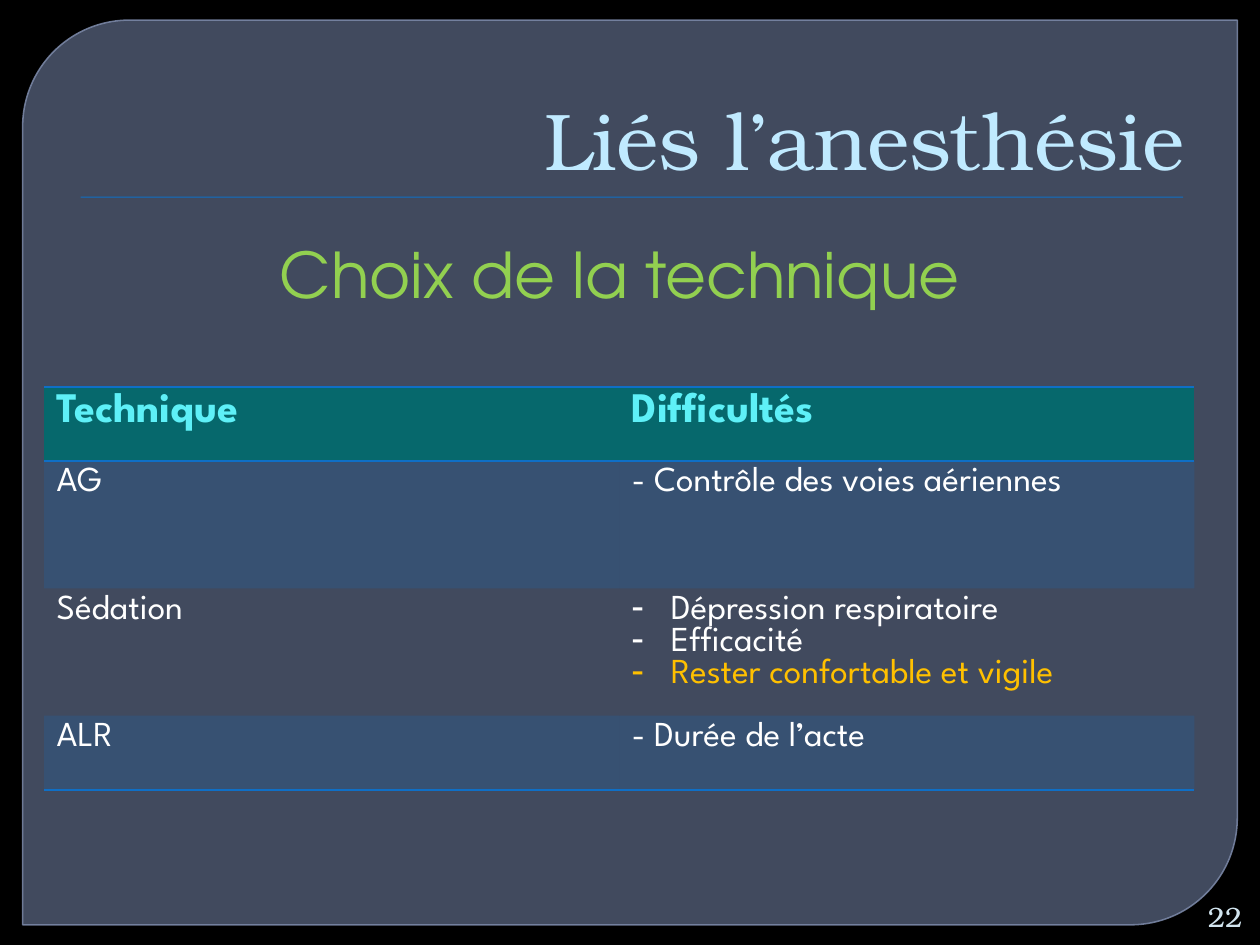
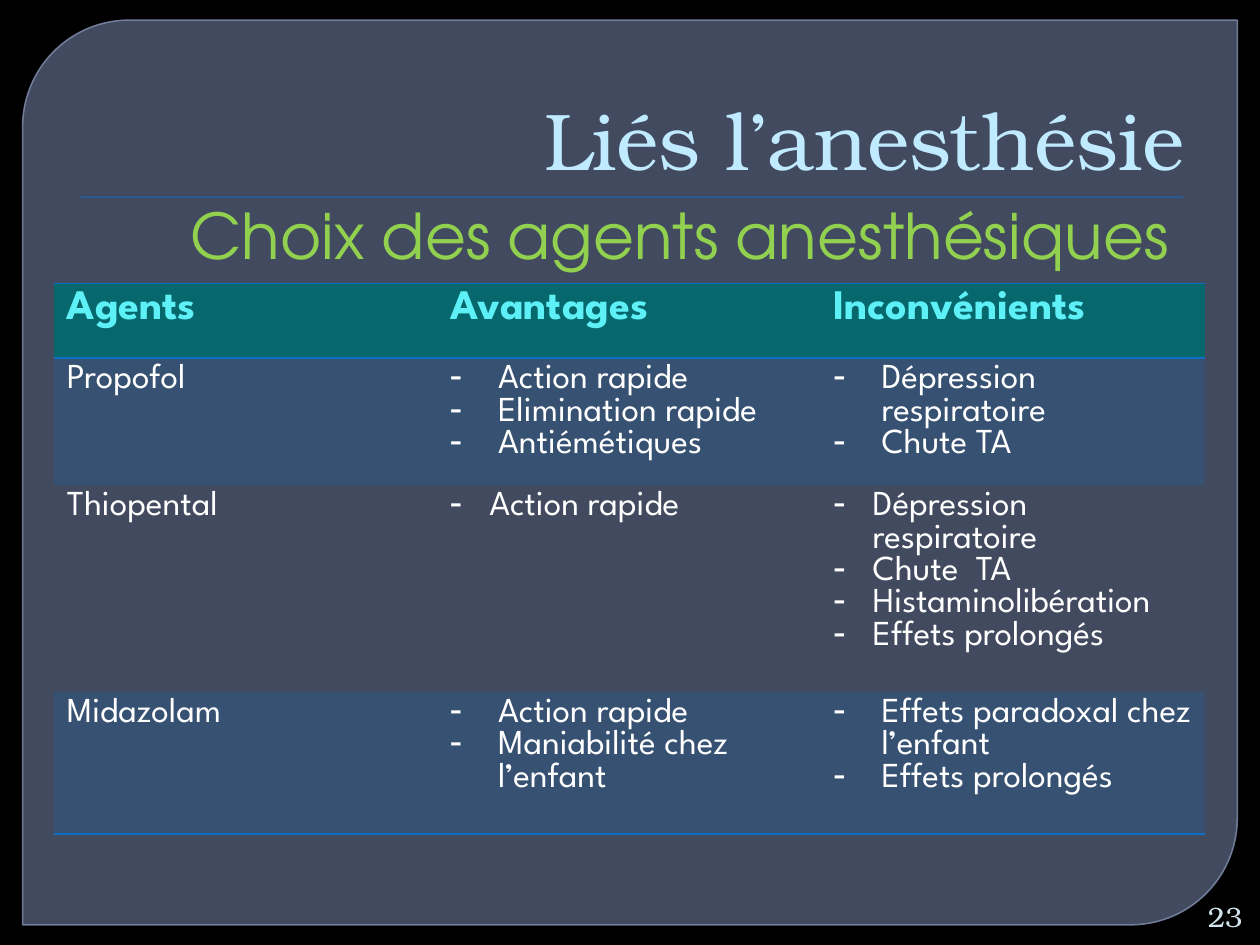
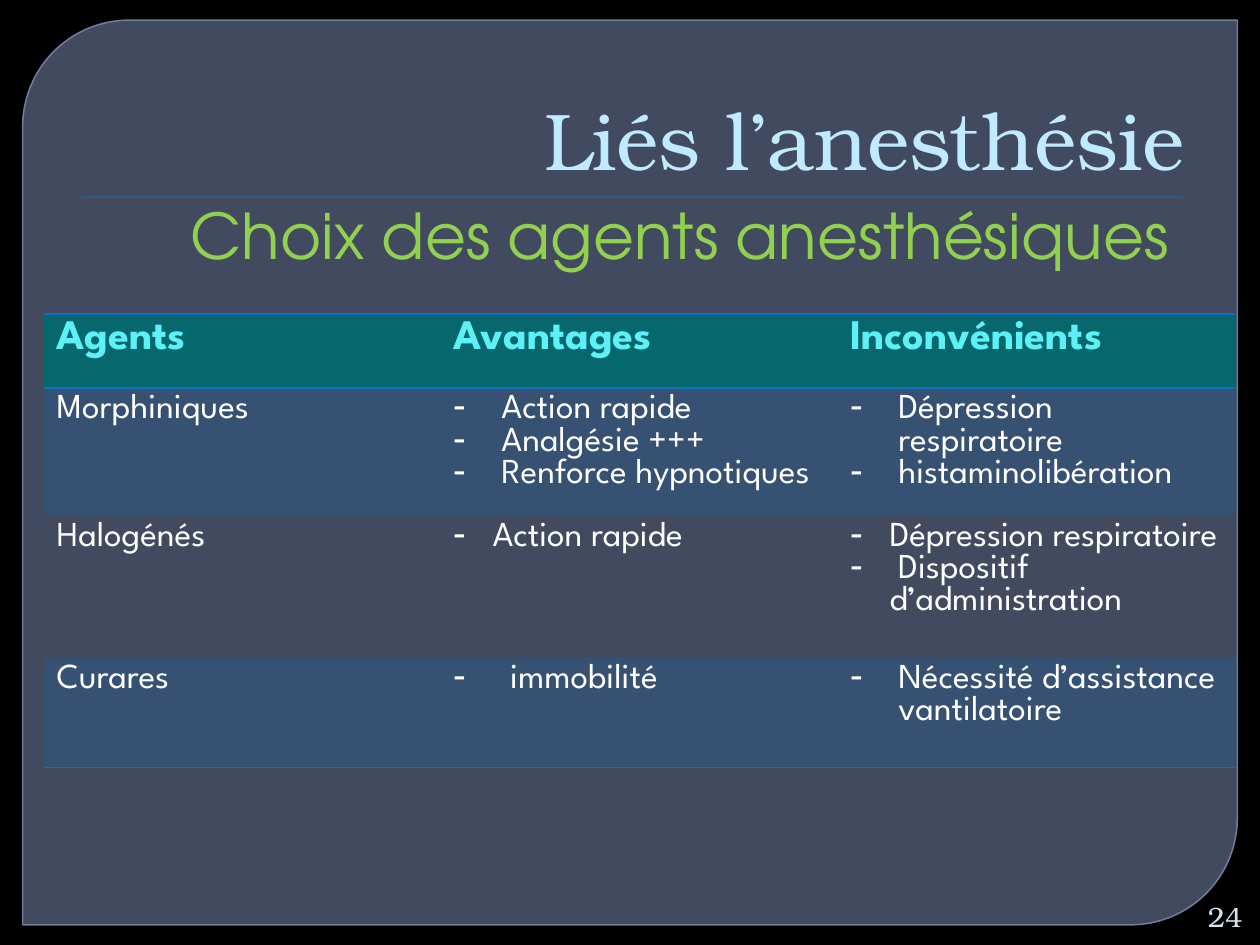
from dataclasses import dataclass

from lxml.etree import SubElement
from pptx import Presentation
from pptx.dml.color import RGBColor
from pptx.enum.shapes import MSO_SHAPE
from pptx.enum.text import MSO_ANCHOR as Anchor, MSO_AUTO_SIZE as AutoSize, PP_ALIGN as Align
from pptx.oxml.ns import qn
from pptx.util import Inches, Pt


@dataclass(frozen=True)
class Theme:
    backdrop: str = "000000"
    panel: str = "647291"
    panel_line: str = "7B88A7"
    accent: str = "0F6FC6"
    header_fill: str = "06686C"
    highlight: str = "FFC000"
    no_style: str = "{2D5ABB26-0587-4C30-8999-92F81FD0307C}"
    title = dict(name="TeX Gyre Bonum", size=46, color="C0EAFF")
    subtitle = dict(name="TeX Gyre Adventor", size=36, color="92D050")
    number = dict(name="TeX Gyre Bonum", size=16, color="D1E4EE")
    header = dict(name="League Spartan", size=24, color="5EF0F7", bold=True)
    body = dict(name="League Spartan", size=20, color="FFFFFF", bold=False)


THEME = Theme()
TITLE = "Liés l’anesthésie"
FIRST_NUMBER = 22
HIGHLIGHTED = "Rester confortable et vigile"
AGENT_HEADER = ("Agents", "Avantages", "Inconvénients")
AGENT_SUBTITLE = dict(subtitle="Choix des agents anesthésiques",
                      subtitle_box=(1.34, 1.39, 8.11, 0.94))

# In table rows a string is plain text and a list is a dashed list.
SLIDES = [
    dict(
        subtitle="Choix de la technique",
        subtitle_box=(1.22, 1.7, 7.4, 0.94),
        table_box=(0.35, 3.07, 9.13),
        heights=(0.59, 1.01, 1.01, 0.59),
        rows=[
            ("Technique", "Difficultés"),
            ("AG", "- Contrôle des voies aériennes"),
            ("Sédation", ["Dépression respiratoire", "Efficacité", HIGHLIGHTED]),
            ("ALR", "- Durée de l’acte"),
        ],
    ),
    dict(
        **AGENT_SUBTITLE,
        table_box=(0.43, 2.25, 9.13),
        heights=(0.59, 1.01, 1.64, 1.13),
        rows=[
            AGENT_HEADER,
            ("Propofol", ["Action rapide", "Elimination rapide", "Antiémétiques"],
             ["Dépression respiratoire", "Chute TA"]),
            ("Thiopental", ["Action rapide"],
             ["Dépression respiratoire", "Chute  TA", "Histaminolibération",
              "Effets prolongés"]),
            ("Midazolam", ["Action rapide", "Maniabilité chez l’enfant"],
             ["Effets paradoxal chez l’enfant", "Effets prolongés"]),
        ],
    ),
    dict(
        **AGENT_SUBTITLE,
        table_box=(0.35, 2.49, 9.45),
        heights=(0.59, 1.01, 1.13, 0.87),
        rows=[
            AGENT_HEADER,
            ("Morphiniques", ["Action rapide", "Analgésie +++", "Renforce hypnotiques"],
             ["Dépression respiratoire", "histaminolibération"]),
            ("Halogénés", ["Action rapide"],
             ["Dépression respiratoire", " Dispositif d’administration"]),
            ("Curares", [" immobilité"], ["Nécessité d’assistance vantilatoire"]),
        ],
    ),
]


def inches(*lengths):
    return [Inches(length) for length in lengths]


def write(para, text, style):
    span = para.add_run()
    span.text = text
    for key, value in style.items():
        if key == "color":
            span.font.color.rgb = RGBColor.from_string(value)
        else:
            setattr(span.font, key, Pt(value) if key == "size" else value)


def paint(fill, color):
    fill.solid()
    fill.fore_color.rgb = RGBColor.from_string(color)


def set_opacity(element, percent):
    """Make every colour inside the element translucent."""
    for color in element.iter(qn("a:srgbClr")):
        SubElement(color, qn("a:alpha"), val=str(percent * 1000))


def fill_text_shape(shape, text, style, align, anchor):
    frame = shape.text_frame
    settings = dict(word_wrap=True, auto_size=AutoSize.NONE, vertical_anchor=anchor)
    for key, value in settings.items():
        setattr(frame, key, value)
    frame.paragraphs[0].alignment = align
    write(frame.paragraphs[0], text, style)


def add_text(page, box, *content):
    fill_text_shape(page.shapes.add_textbox(*inches(*box)), *content)


def decorate_layout(layout, page):
    """Draw the panel and title rule on a page, then move them to its layout."""
    paint(layout.background.fill, THEME.backdrop)

    panel = page.shapes.add_shape(MSO_SHAPE.ROUND_2_DIAG_RECTANGLE,
                                  *inches(0.18, 0.16, 9.64, 7.18))
    panel.adjustments[0], panel.adjustments[1] = 0.118, 0
    panel.shadow.inherit = False
    paint(panel.fill, THEME.panel)
    set_opacity(panel.element.spPr, 65)
    paint(panel.line.fill, THEME.panel_line)
    panel.line.width = Pt(0.87)
    set_opacity(panel.element.spPr.find(qn("a:ln")), 88)

    rule = page.shapes.add_shape(MSO_SHAPE.RECTANGLE, *inches(0.64, 1.56, 8.75, 0.01))
    paint(rule.fill, THEME.accent)
    rule.line.fill.background()
    rule.shadow.inherit = False
    effects = rule.element.spPr.find(qn("a:effectLst"))
    shadow = SubElement(effects, qn("a:outerShdw"), blurRad=str(Pt(1)),
                        dist=str(Pt(1)), dir=str(90 * 60000))
    SubElement(shadow, qn("a:srgbClr"), val="000000")
    set_opacity(shadow, 75)

    for shape in (panel, rule):
        layout.shapes.element.append(shape.element)


def add_border(cell, side):
    line = SubElement(cell._tc.get_or_add_tcPr(), qn(f"a:ln{side}"), w=str(Pt(1)))
    fill = SubElement(line, qn("a:solidFill"))
    SubElement(fill, qn("a:srgbClr"), val=THEME.accent)


def add_dash(para, indent):
    props = para._p.get_or_add_pPr()
    props.set("marL", str(Inches(indent)))
    props.set("indent", str(-Inches(indent)))
    SubElement(props, qn("a:buChar"), char="-")


def fill_cell(cell, content, row, last_row):
    is_header, is_banded = row == 0, row % 2 == 1
    for side in "TB" if is_header else "B" if row == last_row else "":
        add_border(cell, side)
    if is_header:
        paint(cell.fill, THEME.header_fill)
    elif is_banded:
        paint(cell.fill, THEME.accent)
        set_opacity(cell._tc.tcPr.find(qn("a:solidFill")), 20)
    else:
        cell.fill.background()

    is_list = isinstance(content, list)
    frame = cell.text_frame
    for index, text in enumerate(content if is_list else [content]):
        para = frame.add_paragraph() if index else frame.paragraphs[0]
        if is_list:
            add_dash(para, 0.38 if is_banded else 0.31)
        style = THEME.header if is_header else THEME.body
        if text == HIGHLIGHTED:
            style = {**style, "color": THEME.highlight}
        write(para, text, style)


def add_grid(page, table_box, heights, rows):
    left, top, width = table_box
    frame = page.shapes.add_table(len(rows), len(rows[0]),
                                  *inches(left, top, width, sum(heights)))
    table = frame.table
    table.horz_banding = table.first_row = False
    table._tbl.tblPr.find(qn("a:tableStyleId")).text = THEME.no_style
    for row, (height, contents) in enumerate(zip(heights, rows)):
        table.rows[row].height = Inches(height)
        for column, content in enumerate(contents):
            fill_cell(table.cell(row, column), content, row, len(rows) - 1)


def add_page(deck, layout, number, subtitle, subtitle_box, **grid):
    page = deck.slides.add_slide(layout)
    title = page.shapes.title
    title.left, title.top, title.width, title.height = inches(0.5, 0.28, 9, 1.25)
    fill_text_shape(title, TITLE, THEME.title, Align.RIGHT, Anchor.BOTTOM)
    add_text(page, (9.45, 7.12, 0.51, 0.3), str(number), THEME.number,
             Align.RIGHT, Anchor.MIDDLE)
    add_text(page, subtitle_box, subtitle, THEME.subtitle, Align.CENTER, Anchor.MIDDLE)
    add_grid(page, **grid)
    return page


def main():
    deck = Presentation()
    deck.slide_width, deck.slide_height = inches(10, 7.5)
    layout = deck.slide_layouts.get_by_name("Title Only")
    pages = [add_page(deck, layout, number, **content)
             for number, content in enumerate(SLIDES, FIRST_NUMBER)]
    decorate_layout(layout, pages[0])
    deck.save("out.pptx")


if __name__ == "__main__":
    main()
